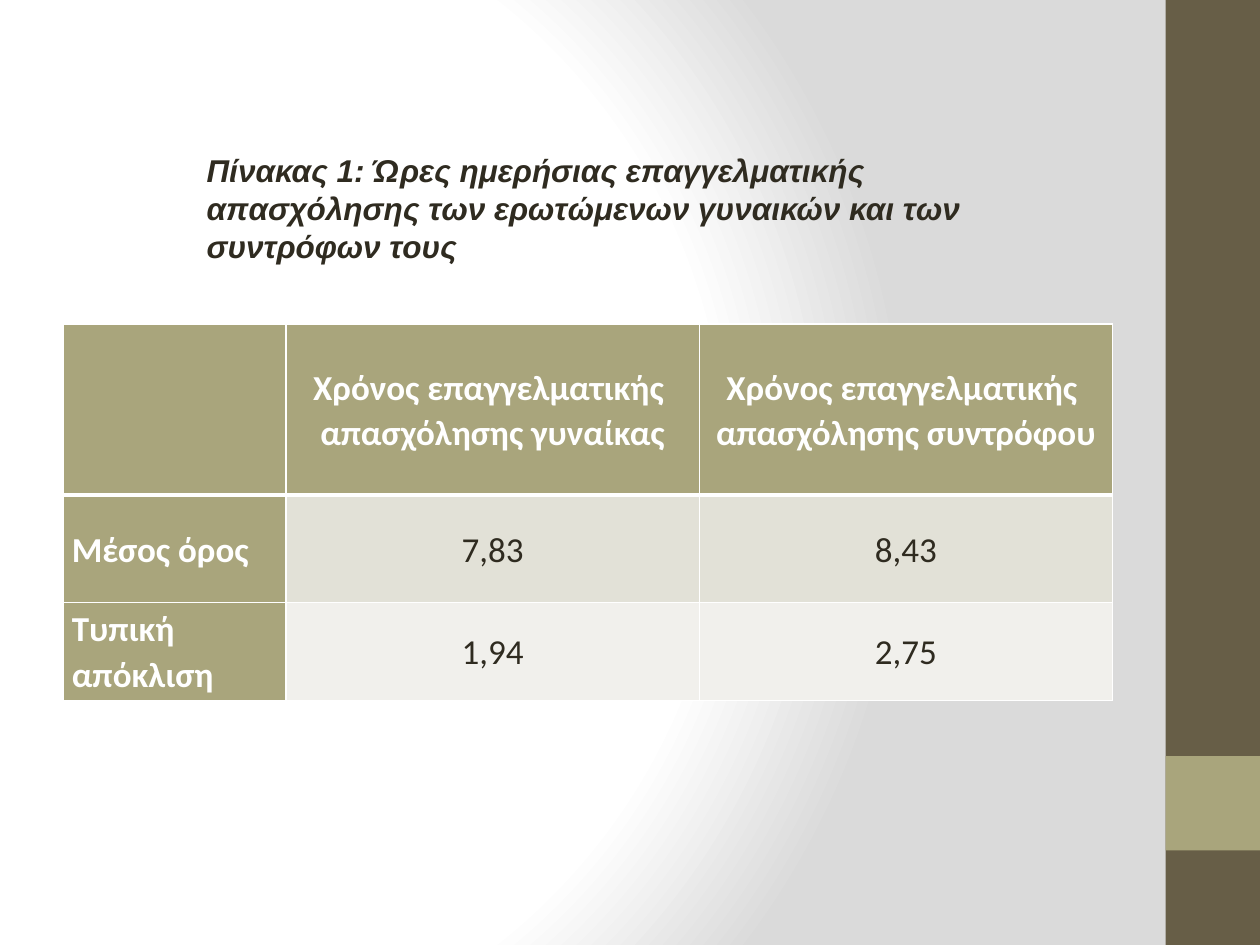
from lxml.etree import SubElement
from pptx import Presentation
from pptx.dml.color import RGBColor
from pptx.enum.shapes import MSO_SHAPE
from pptx.enum.text import MSO_ANCHOR, MSO_AUTO_SIZE, PP_ALIGN
from pptx.oxml import parse_xml
from pptx.oxml.ns import nsdecls, qn
from pptx.util import Inches, Pt

TITLE = ("Πίνακας 1: Ώρες ημερήσιας επαγγελματικής απασχόλησης "
         "των ερωτώμενων γυναικών και των συντρόφων τους")
ROWS = [
    ("", "Χρόνος επαγγελματικής \vαπασχόλησης γυναίκας",
     "Χρόνος επαγγελματικής \vαπασχόλησης συντρόφου"),
    ("Μέσος όρος", "7,83", "8,43"),
    ("Τυπική απόκλιση", "1,94", "2,75"),
]
COL_WIDTHS = (1.77, 3.28, 3.28)
ROW_HEIGHTS = (1.36, 0.85, 0.78)
COLORS = {"white": "FFFFFF", "grey": "DADADA", "brown": "675E47", "olive": "A9A57C",
          "text": "2F2B20", "band1": "E2E1D7", "band2": "F1F0EC"}
STOPS = ((0, "white"), (75, "white"), (100, "grey"))


def rgb(name):
    return RGBColor.from_string(COLORS[name])


def style_font(font, face, size, color, bold, italic=False):
    font.name, font.size = face, Pt(size)
    font.bold, font.italic = bold, italic
    font.color.rgb = rgb(color)


def set_background(s):
    stops = "".join(f'<a:gs pos="{pos * 1000}"><a:srgbClr val="{COLORS[name]}"/></a:gs>'
                    for pos, name in STOPS)
    s.element.cSld.insert(0, parse_xml(
        f'<p:bg {nsdecls("p", "a")}><p:bgPr><a:gradFill rotWithShape="1">'
        f'<a:gsLst>{stops}</a:gsLst><a:path path="circle">'
        '<a:fillToRect l="20000" t="50000" r="100000" b="50000"/></a:path>'
        '</a:gradFill><a:effectLst/></p:bgPr></p:bg>'))


def add_block(s, color, x, y, w, h):
    sp = s.shapes.add_shape(MSO_SHAPE.RECTANGLE, x, y, w, h)
    sp.shadow.inherit = False
    sp.fill.solid()
    sp.fill.fore_color.rgb = rgb(color)
    sp.line.fill.background()


def set_borders(cell, widths):
    tcPr = cell._tc.get_or_add_tcPr()
    for i, (side, width) in enumerate(widths.items()):
        ln = parse_xml(f'<a:{side} {nsdecls("a")} w="{Pt(width)}"/>')
        SubElement(SubElement(ln, qn("a:solidFill")), qn("a:srgbClr"), val=COLORS["white"])
        tcPr.insert(i, ln)


def style_cell(cell, text, row, col):
    header = row == 0 or col == 0
    cell.fill.solid()
    cell.fill.fore_color.rgb = rgb("olive" if header else f"band{row}")
    set_borders(cell, {"lnL": 1, "lnR": 1, "lnT": 3 if row == 1 else 1,
                       "lnB": 3 if row == 0 else 1})
    cell.vertical_anchor = MSO_ANCHOR.MIDDLE
    cell.margin_left = cell.margin_right = Inches(0.07)
    cell.margin_top = cell.margin_bottom = 0
    cell.text_frame.text = text
    p = cell.text_frame.paragraphs[0]
    p.alignment = PP_ALIGN.CENTER if col else PP_ALIGN.LEFT
    p.line_spacing, p.space_after = 1.07, Pt(8)
    for r in p.runs:
        style_font(r.font, "Calibri", 20, "white" if header else "text", header)


def add_title(s):
    title = s.shapes.title
    title.left, title.top, title.width, title.height = map(Inches, (1.54, 1.15, 6.4, 1.01))
    tf = title.text_frame
    tf.text = TITLE
    tf.word_wrap, tf.auto_size = True, MSO_AUTO_SIZE.SHAPE_TO_FIT_TEXT
    tf.vertical_anchor = MSO_ANCHOR.TOP
    p = tf.paragraphs[0]
    p.alignment = PP_ALIGN.LEFT
    style_font(p.runs[0].font, "Arial", 18, "text", True, True)


def add_hours_table(s):
    table = s.shapes.add_table(len(ROWS), len(COL_WIDTHS), Inches(0.5), Inches(2.57),
                               Inches(sum(COL_WIDTHS)), Inches(sum(ROW_HEIGHTS))).table
    for column, width in zip(table.columns, COL_WIDTHS):
        column.width = Inches(width)
    for i, (texts, height) in enumerate(zip(ROWS, ROW_HEIGHTS)):
        table.rows[i].height = Inches(height)
        for j, text in enumerate(texts):
            style_cell(table.cell(i, j), text, i, j)


def main():
    prs = Presentation()
    prs.slide_width, prs.slide_height = Inches(10), Inches(7.5)
    s = prs.slides.add_slide(prs.slide_layouts[5])
    set_background(s)
    band = Inches(0.75)
    x = prs.slide_width - band
    add_block(s, "brown", x, 0, band, prs.slide_height)
    add_block(s, "olive", x, prs.slide_height - 2 * band, band, band)
    add_hours_table(s)
    add_title(s)
    prs.save("out.pptx")


if __name__ == "__main__":
    main()
